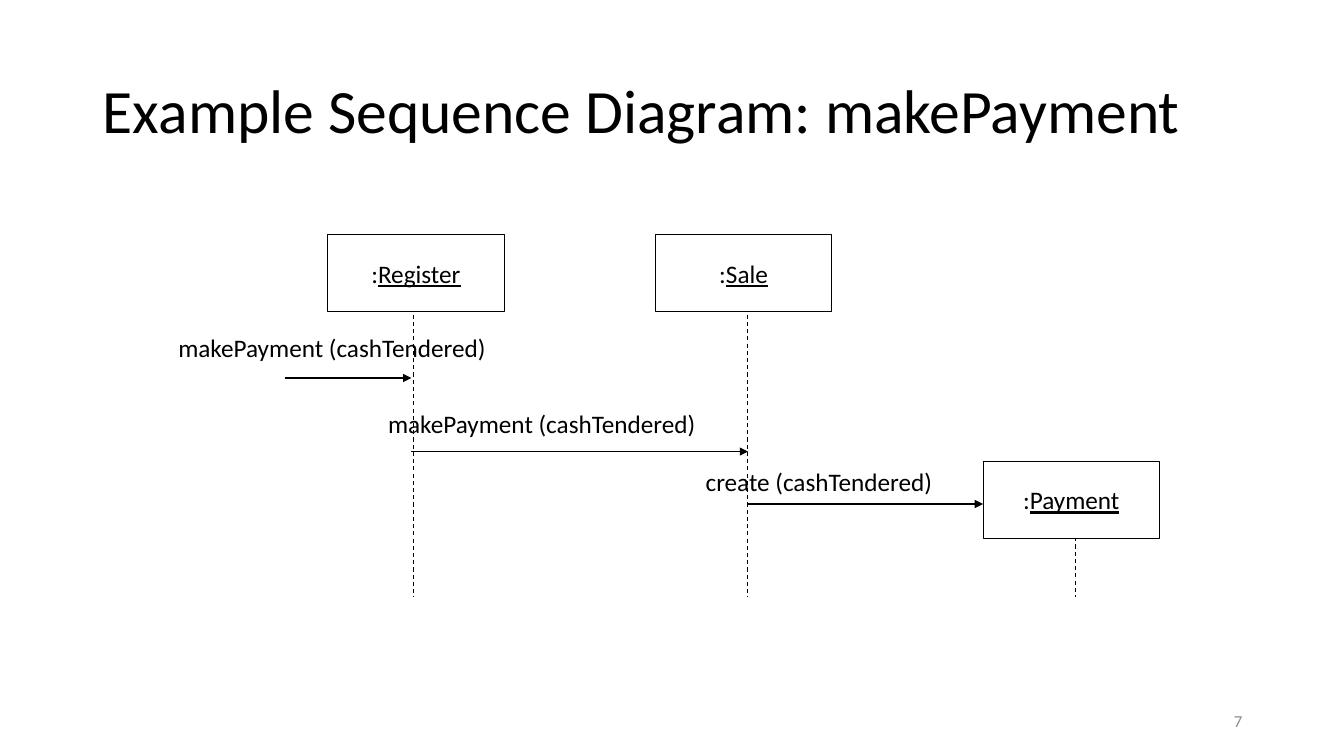
from dataclasses import dataclass

from lxml import etree
from pptx import Presentation
from pptx.dml.color import RGBColor
from pptx.enum.dml import MSO_LINE
from pptx.enum.shapes import MSO_CONNECTOR, MSO_SHAPE
from pptx.enum.text import MSO_ANCHOR, MSO_AUTO_SIZE, PP_ALIGN
from pptx.oxml.ns import qn
from pptx.util import Inches, Pt

STRAIGHT = MSO_CONNECTOR.STRAIGHT
RECTANGLE = MSO_SHAPE.RECTANGLE
DASH = MSO_LINE.DASH
TOP, MIDDLE = MSO_ANCHOR.TOP, MSO_ANCHOR.MIDDLE
LEFT, CENTER, RIGHT = PP_ALIGN.LEFT, PP_ALIGN.CENTER, PP_ALIGN.RIGHT
NO_FIT, GROW = MSO_AUTO_SIZE.NONE, MSO_AUTO_SIZE.SHAPE_TO_FIT_TEXT

FONT = "Calibri"
COLORS = {"ink": "000000", "paper": "FFFFFF", "muted": "8C8C8C"}
BOX_W, BOX_H = 1.75, 0.76
LIFELINE_END = 5.92


@dataclass(frozen=True)
class Participant:
    name: str
    left: float
    top: float
    lifeline_x: float
    lifeline_top: float


@dataclass(frozen=True)
class Message:
    text: str
    label_left: float
    label_top: float
    label_width: float
    start: float
    end: float
    y: float


PARTICIPANTS = [
    Participant("Register", 3.25, 2.33, 4.1, 3.05),
    Participant("Sale", 6.5, 2.33, 7.41, 3.05),
    Participant("Payment", 9.75, 4.58, 10.67, 5.33),
]

MESSAGES = [
    Message("makePayment (cashTendered)", 1.67, 3.25, 3.29, 2.83, 4.08, 3.75),
    Message("makePayment (cashTendered)", 3.75, 4, 3.29, 4.08, 7.42, 4.48),
    Message("create (cashTendered)", 6.9, 4.58, 2.48, 7.42, 9.75, 5),
]


def color(name: str) -> RGBColor:
    return RGBColor.from_string(COLORS[name])


def add_text(tf, text: str, *, size: float = 18, ink: str = "ink", align=LEFT,
             anchor=TOP, wrap: bool = False, fit=NO_FIT,
             underline: bool = False) -> None:
    tf.word_wrap = wrap
    tf.auto_size = fit
    tf.vertical_anchor = anchor
    p = tf.paragraphs[0]
    p.alignment = align
    r = p.add_run()
    r.text = text
    r.font.name = FONT
    r.font.size = Pt(size)
    r.font.color.rgb = color(ink)
    if underline:
        r.font.underline = True


def add_line(s, x1: float, y1: float, x2: float, y2: float, *,
             dashed: bool = False, arrow: bool = False) -> None:
    line = s.shapes.add_connector(
        STRAIGHT, Inches(x1), Inches(y1), Inches(x2), Inches(y2))
    line.line.color.rgb = color("ink")
    line.line.width = Pt(0.75)
    if dashed:
        line.line.dash_style = DASH
    if arrow:
        etree.SubElement(line.line._get_or_add_ln(), qn("a:tailEnd"), type="triangle")
    etree.SubElement(line._element.spPr, qn("a:effectLst"))


def add_text_box(s, left: float, top: float, width: float, text: str, **fmt) -> None:
    sp = s.shapes.add_textbox(Inches(left), Inches(top), Inches(width), Inches(0.4))
    add_text(sp.text_frame, text, **fmt)


def add_participant(s, item: Participant) -> None:
    add_line(s, item.lifeline_x, item.lifeline_top,
             item.lifeline_x, LIFELINE_END, dashed=True)
    sp = s.shapes.add_shape(RECTANGLE, Inches(item.left), Inches(item.top),
                            Inches(BOX_W), Inches(BOX_H))
    sp.shadow.inherit = False
    sp.fill.solid()
    sp.fill.fore_color.rgb = color("paper")
    sp.line.color.rgb = color("ink")
    sp.line.width = Pt(0.75)
    add_text(sp.text_frame, ":", align=CENTER, anchor=MIDDLE)
    add_text(sp.text_frame, item.name, align=CENTER, anchor=MIDDLE, underline=True)


def add_message(s, item: Message) -> None:
    add_line(s, item.start, item.y, item.end, item.y, arrow=True)
    add_text_box(s, item.label_left, item.label_top, item.label_width,
                 item.text, fit=GROW)


def add_title(s, text: str) -> None:
    title = s.shapes.title
    title.left, title.top = Inches(0.92), Inches(0.4)
    title.width, title.height = Inches(11.5), Inches(1.45)
    add_text(title.text_frame, text, size=44, anchor=MIDDLE, wrap=True)
    title.text_frame.paragraphs[0].line_spacing = 0.9


def main() -> None:
    prs = Presentation()
    prs.slide_width, prs.slide_height = Inches(13.33), Inches(7.5)
    s = prs.slides.add_slide(prs.slide_layouts[5])
    add_title(s, "Example Sequence Diagram: makePayment")
    for participant in PARTICIPANTS:
        add_participant(s, participant)
    for message in MESSAGES:
        add_message(s, message)
    add_text_box(s, 9.42, 6.95, 3, "7", size=12, ink="muted",
                 align=RIGHT, anchor=MIDDLE, wrap=True)
    prs.save("out.pptx")


if __name__ == "__main__":
    main()
